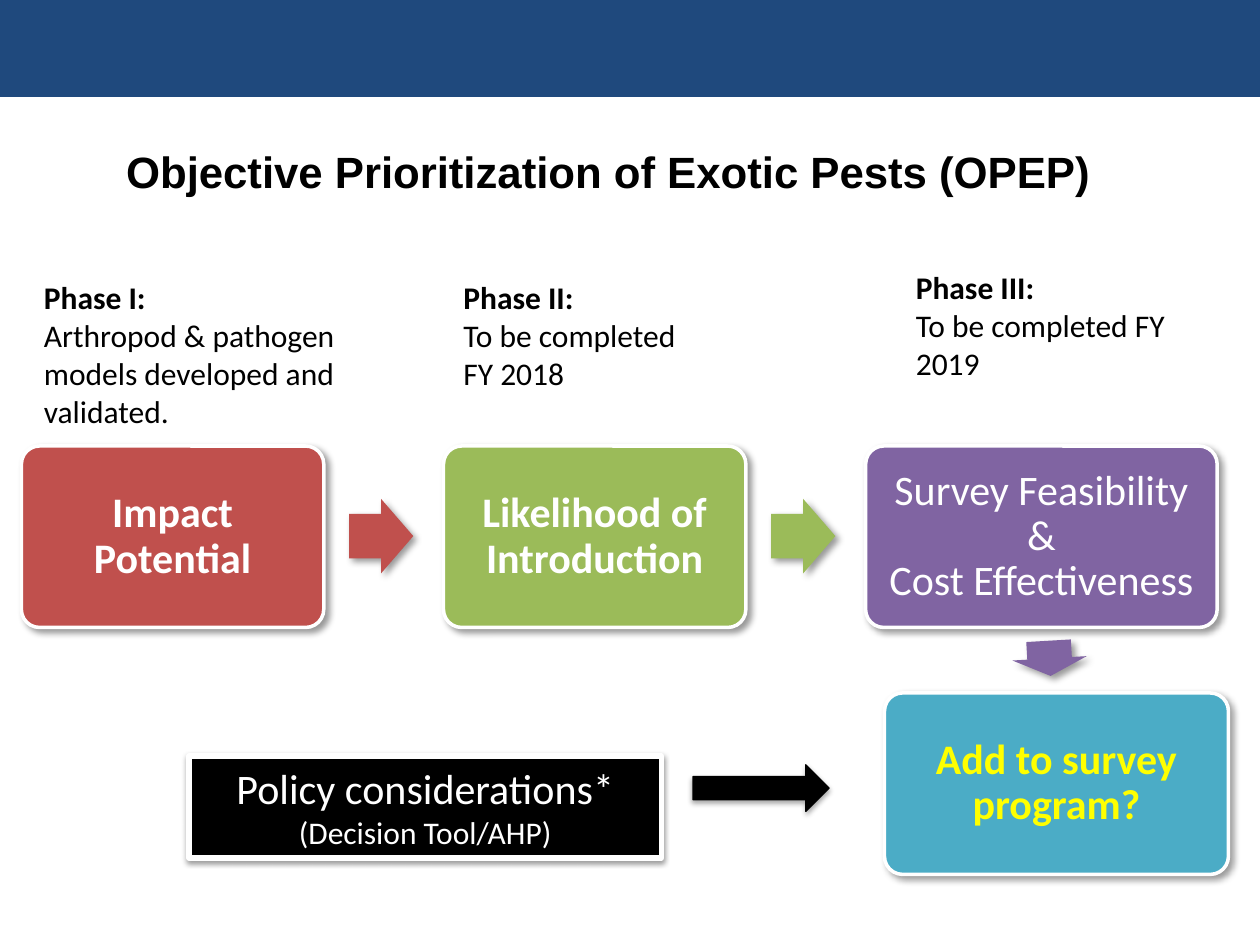
import dataclasses
import lxml.etree
import pptx
import pptx.dml.color
import pptx.enum.shapes
import pptx.enum.text
import pptx.oxml.ns
import pptx.util

SHAPE = pptx.enum.shapes.MSO_SHAPE
ANCHOR = pptx.enum.text.MSO_ANCHOR
ALIGN = pptx.enum.text.PP_ALIGN
CELL = 0.1
COLUMNS, ROWS = 100, 75


@dataclasses.dataclass(frozen=True)
class Theme:
    banner: str = "1F497D"
    impact: str = "C0504D"
    likelihood: str = "9BBB59"
    survey: str = "8064A2"
    decision: str = "4BACC6"
    black: str = "000000"
    white: str = "FFFFFF"
    highlight: str = "FFFF00"
    title_font: str = "Arial"
    body_font: str = "Calibri"
    title_size: int = 25
    step_size: int = 24
    note_size: int = 18


THEME = Theme()
STEP_SHADOW = (40, 4, 3, 45)
POLICY_SHADOW = (38, 3.1, 1.6, 90)
POLICY_ARROW_SHADOW = (35, 3.1, 1.8, 90)


def color(code):
    return pptx.dml.color.RGBColor.from_string(code)


def grid(*cells):
    return [pptx.util.Inches(cell * CELL) for cell in cells]


def add_shadow(shape, opacity, blur, distance, angle):
    effects = shape._element.spPr.find(pptx.oxml.ns.qn("a:effectLst"))
    outer = lxml.etree.SubElement(
        effects, pptx.oxml.ns.qn("a:outerShdw"), blurRad=str(pptx.util.Pt(blur)),
        dist=str(pptx.util.Pt(distance)), dir=str(angle * 60000), rotWithShape="0")
    tint = lxml.etree.SubElement(outer, pptx.oxml.ns.qn("a:srgbClr"), val=THEME.black)
    lxml.etree.SubElement(tint, pptx.oxml.ns.qn("a:alpha"), val=str(opacity * 1000))


def add_block(page, kind, place, fill, line=None, width=2, shadow=None, adjustments=(), turn=0):
    shape = page.shapes.add_shape(kind, *grid(*place))
    shape.rotation = turn
    for index, value in enumerate(adjustments):
        shape.adjustments[index] = value
    shape.fill.solid()
    shape.fill.fore_color.rgb = color(fill)
    if line:
        shape.line.color.rgb = color(line)
        shape.line.width = pptx.util.Pt(width)
    else:
        shape.line.fill.background()
    shape.shadow.inherit = False
    if shadow:
        add_shadow(shape, *shadow)
    return shape


def write(frame, text, *, size, ink=THEME.black, font=THEME.body_font, bold=False,
          align=ALIGN.LEFT, spacing=1.0):
    para = frame.paragraphs[0] if not frame.text else frame.add_paragraph()
    para.alignment = align
    para.line_spacing = spacing
    for index, line in enumerate(text.split("\n")):
        if index:
            para.add_line_break()
        span = para.add_run()
        span.text = line
        span.font.name = font
        span.font.size = pptx.util.Pt(size)
        span.font.bold = bold
        span.font.color.rgb = color(ink)


def add_text_box(page, place, anchor=ANCHOR.TOP):
    frame = page.shapes.add_textbox(*grid(*place)).text_frame
    frame.word_wrap = True
    frame.vertical_anchor = anchor
    return frame


def add_step(page, left, top, width, text, fill, ink=THEME.white, bold=True):
    box = add_block(page, SHAPE.ROUNDED_RECTANGLE, (left, top, width, 14.4), fill,
                    line=THEME.white, shadow=STEP_SHADOW, adjustments=(0.1,))
    frame = box.text_frame
    frame.word_wrap = True
    frame.vertical_anchor = ANCHOR.MIDDLE
    frame.margin_top = frame.margin_bottom = pptx.util.Inches(0.1)
    write(frame, text, size=THEME.step_size, ink=ink, bold=bold, align=ALIGN.CENTER, spacing=0.9)


def add_step_arrow(page, left, top, length, fill, turn=0):
    add_block(page, SHAPE.RIGHT_ARROW, (left, top, length, 5.9), fill,
              shadow=STEP_SHADOW, adjustments=(0.6, 0.5), turn=turn)


def add_phase(page, place, heading, status):
    frame = add_text_box(page, place)
    write(frame, heading, size=THEME.note_size, bold=True)
    write(frame, status, size=THEME.note_size)


def add_policy(page):
    box = add_block(page, SHAPE.RECTANGLE, (15, 60, 37.5, 8.1), THEME.black,
                    line=THEME.white, width=3, shadow=POLICY_SHADOW)
    frame = box.text_frame
    frame.word_wrap = True
    frame.vertical_anchor = ANCHOR.TOP
    for text, size in (("Policy considerations*", THEME.step_size),
                       ("(Decision Tool/AHP)", THEME.note_size)):
        write(frame, text, size=size, ink=THEME.white, align=ALIGN.CENTER)
    add_block(page, SHAPE.RIGHT_ARROW, (55, 60.7, 10.8, 3.7), THEME.black,
              line=THEME.black, width=0.75, shadow=POLICY_ARROW_SHADOW)


def main():
    deck = pptx.Presentation()
    deck.slide_width, deck.slide_height = grid(COLUMNS, ROWS)
    page = deck.slides.add_slide(deck.slide_layouts[6])

    add_block(page, SHAPE.RECTANGLE, (0, 0, COLUMNS, 7.7), THEME.banner)
    title = add_text_box(page, (5.3, 9.5, 85.9, 7.3), ANCHOR.MIDDLE)
    write(title, "Objective Prioritization of Exotic Pests (OPEP)", size=THEME.title_size,
          font=THEME.title_font, bold=True, align=ALIGN.CENTER, spacing=1.2)

    first, pitch, step_top = 1.7, 33.5, 35.4
    steps = (
        ("Impact Potential", THEME.impact, 24, True),
        ("Likelihood of Introduction", THEME.likelihood, 24, True),
        ("Survey Feasibility &\nCost Effectiveness", THEME.survey, 27.9, False),
    )
    for index, (text, fill, width, bold) in enumerate(steps):
        left = first + index * pitch
        add_step(page, left, step_top, width, text, fill, bold=bold)
        if index < len(steps) - 1:
            add_step_arrow(page, left + 26, 39.6, 5.1, fill)
    add_step_arrow(page, 81.9, 49.3, 2.8, THEME.survey, turn=86.6)
    add_step(page, 70.2, 55, 27.3, "Add to survey program?", THEME.decision, ink=THEME.highlight)

    phases = (
        ((2.5, 21.6, 26.5, 13.1), "Phase I:",
         "Arthropod & pathogen models developed and validated."),
        ((35.8, 21.6, 25, 10.1), "Phase II:", "To be completed\nFY 2018"),
        ((71.7, 20.8, 22.5, 10.1), "Phase III:", "To be completed FY 2019"),
    )
    for place, heading, status in phases:
        add_phase(page, place, heading, status)
    add_policy(page)

    deck.save("out.pptx")


if __name__ == "__main__":
    main()
